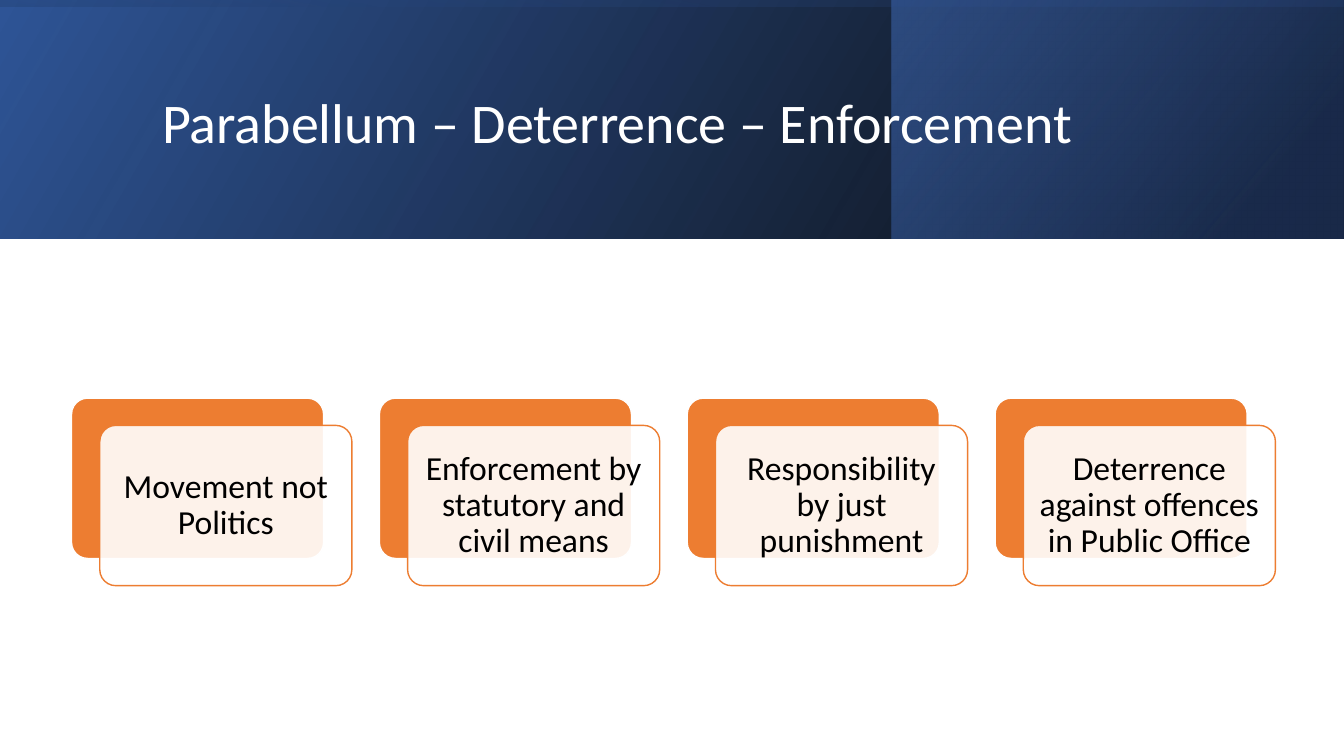
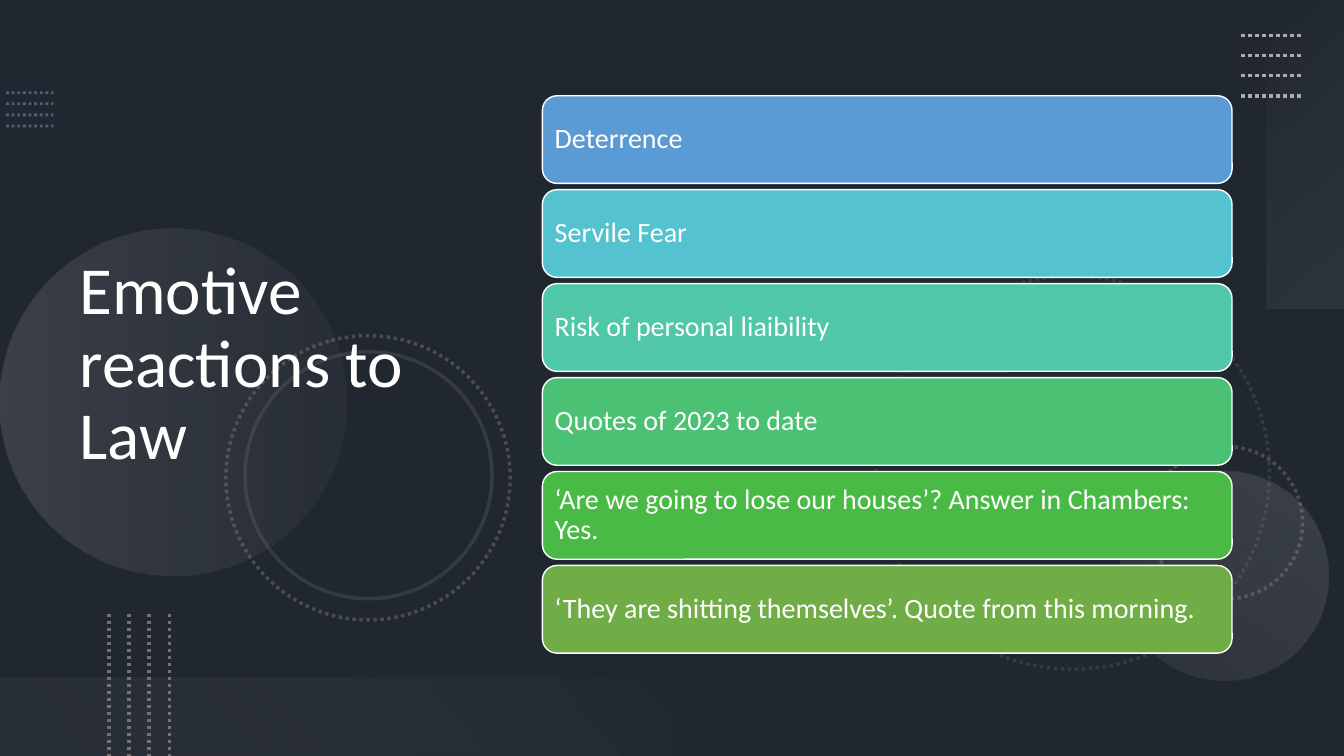
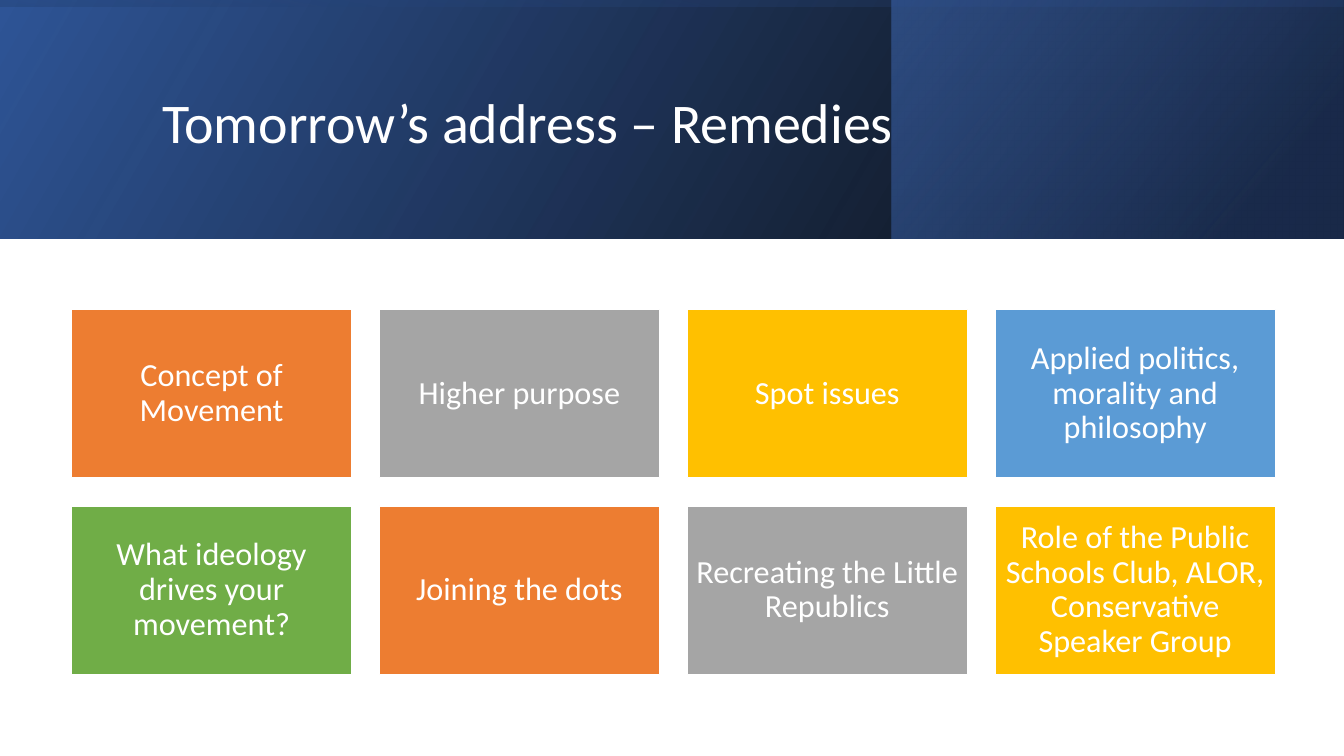
from pptx import Presentation
from pptx.dml.color import RGBColor
from pptx.enum.dml import MSO_LINE
from pptx.enum.shapes import MSO_CONNECTOR, MSO_SHAPE as SHAPE
from pptx.enum.text import MSO_ANCHOR, PP_ALIGN
from pptx.oxml import parse_xml
from pptx.oxml.ns import nsdecls, qn
from pptx.util import Inches, Pt

FONT = "Calibri"
WHITE = RGBColor(0xFF, 0xFF, 0xFF)
BLACK = RGBColor(0, 0, 0)
SLATE = RGBColor(0x44, 0x54, 0x6A)
ORANGE = RGBColor(0xED, 0x7D, 0x31)
GREY = RGBColor(0xA5, 0xA5, 0xA5)
GOLD = RGBColor(0xFF, 0xC0, 0x00)
BLUE = RGBColor(0x5B, 0x9B, 0xD5)
GREEN = RGBColor(0x70, 0xAD, 0x47)
CYAN = RGBColor(0x55, 0xC3, 0xCF)
TEAL = RGBColor(0x50, 0xC8, 0xA7)
MINT = RGBColor(0x4B, 0xC1, 0x74)
LEAF = RGBColor(0x4A, 0xBA, 0x46)
DEEP_BLUE = RGBColor(0x2F, 0x55, 0x97)
NAVY = RGBColor(0x20, 0x38, 0x64)
ROYAL = RGBColor(0x44, 0x72, 0xC4)
STEEL = RGBColor(0x84, 0x97, 0xB0)
STONE = RGBColor(0x76, 0x71, 0x71)
ASH = RGBColor(0xAF, 0xAB, 0xAB)
MIST = RGBColor(0xF5, 0xF5, 0xF5)

AIMS_TITLE = "Parabellum – Deterrence – Enforcement"
AIMS = [
    "Movement not Politics",
    "Enforcement by statutory and civil means",
    "Responsibility by just punishment",
    "Deterrence against offences in Public Office",
]
REACTIONS_TITLE = "Emotive reactions to Law"
REACTIONS = [
    ("Deterrence", BLUE),
    ("Servile Fear", CYAN),
    ("Risk of personal liaibility", TEAL),
    ("Quotes of 2023 to date", MINT),
    ("‘Are we going to lose our houses’? Answer in Chambers: Yes.", LEAF),
    ("‘They are shitting themselves’. Quote from this morning.", GREEN),
]
REMEDIES_TITLE = "Tomorrow’s address – Remedies"
REMEDIES = [
    ("Concept of Movement", ORANGE),
    ("Higher purpose", GREY),
    ("Spot issues", GOLD),
    ("Applied politics, morality and philosophy", BLUE),
    ("What ideology drives your movement?", GREEN),
    ("Joining the dots", ORANGE),
    ("Recreating the Little Republics", GREY),
    ("Role of the Public Schools Club, ALOR, Conservative Speaker Group", GOLD),
]

# Gradient: angle, then stops of (position %, colour, opacity %)
# Band part: box, rotation, gradient
BAND = [
    ((0, 0, 13.33, 2.37), 0, (330, (0, BLACK, 96), (100, DEEP_BLUE, 100))),
    ((8.84, 0, 4.48, 2.37), 0, (320, (19, NAVY, 68), (100, ROYAL, 48))),
    ((5.48, -5.48, 2.37, 13.33), 270, (350, (23, DEEP_BLUE, 16), (99, BLACK, 45))),
]
# Ring: left, top, diameter, dotted, opacity %
RINGS = [
    (8.69, 2.74, 3.9, True, 25),
    (11.41, 4.43, 1.51, True, 50),
    (2.24, 3.33, 2.82, True, 50),
    (2.43, 3.49, 2.45, False, 25),
]
# Glow: shape, box, rotation, gradient
GLOWS = [
    (SHAPE.OVAL, (0, 2.27, 3.44, 3.44), 270, (90, (0, ASH, 20), (100, STONE, 10))),
    (SHAPE.OVAL, (11.1, 4.67, 2.08, 2.08), 210, (90, (0, ASH, 10), (100, ASH, 20))),
    (SHAPE.RECTANGLE, (11.42, 1.14, 3.06, 0.78), 270, (140, (0, MIST, 0), (100, ASH, 10))),
    (SHAPE.RECTANGLE, (0, 6.72, 6.67, 0.78), 180, (140, (10, STONE, 10), (100, MIST, 0))),
]
# Dotted lines: first start, length (dx, dy), step (dx, dy), colour, width, opacity %
DOT_GRIDS = [
    ((0.06, 0.92), (0.47, 0), (0, 0.11), STEEL, 2, 50),
    ((12.31, 0.35), (0.6, 0), (0, 0.2), ASH, 2.5, 100),
    ((1.08, 6.09), (0, 1.41), (0.2, 0), STONE, 2.5, 100),
]
LINES_PER_GRID = 4

COLUMNS = 4
CARD_LEFT, CARD_W = 0.71, 2.78
COLUMN_STEP = (9.87 - CARD_LEFT) / (COLUMNS - 1)


def set_opacity(parent, percent):
    """Make the solid colour below an XML element partly transparent."""
    if percent < 100:
        clr = next(parent.iter(qn("a:srgbClr")))
        clr.append(parse_xml(f'<a:alpha {nsdecls("a")} val="{percent * 1000}"/>'))


def set_gradient(sp, angle, *stops):
    marks = "".join(
        f'<a:gs pos="{pos * 1000}"><a:srgbClr val="{color}">'
        f'<a:alpha val="{alpha * 1000}"/></a:srgbClr></a:gs>'
        for pos, color, alpha in stops)
    sp.fill.background()
    spPr = sp._element.spPr
    spPr.replace(spPr.find(qn("a:noFill")), parse_xml(
        f'<a:gradFill {nsdecls("a")} rotWithShape="1"><a:gsLst>{marks}</a:gsLst>'
        f'<a:lin ang="{angle * 60000}" scaled="0"/></a:gradFill>'))


def add_shape(slide, kind, box, fill=None, line=None, width=1, opacity=100,
              rotation=0, corner=None):
    sp = slide.shapes.add_shape(kind, *map(Inches, box))
    sp.shadow.inherit = False
    sp.rotation = rotation
    if corner is not None:
        sp.adjustments[0] = corner
    if fill is None:
        sp.fill.background()
    else:
        sp.fill.solid()
        sp.fill.fore_color.rgb = fill
        set_opacity(sp._element.spPr, opacity)
    if line is None:
        sp.line.fill.background()
    else:
        sp.line.color.rgb = line
        sp.line.width = Pt(width)
    return sp


def write(sp, text, size, color=WHITE, align=PP_ALIGN.LEFT, inset=0.1):
    tf = sp.text_frame
    tf.word_wrap = True
    tf.vertical_anchor = MSO_ANCHOR.MIDDLE
    tf.margin_left = tf.margin_right = Inches(inset)
    tf.margin_top = tf.margin_bottom = Inches(inset)
    p = tf.paragraphs[0]
    p.alignment = align
    p.line_spacing = 0.9
    r = p.add_run()
    r.text = text
    r.font.name = FONT
    r.font.size = Pt(size)
    r.font.color.rgb = color


def add_title(slide, text, box, size):
    write(slide.shapes.add_textbox(*map(Inches, box)), text, size)


def new_slide(prs, color):
    slide = prs.slides.add_slide(prs.slide_layouts[6])
    slide.background.fill.solid()
    slide.background.fill.fore_color.rgb = color
    return slide


def add_banded_slide(prs, title):
    slide = new_slide(prs, WHITE)
    for box, rotation, gradient in BAND:
        sp = add_shape(slide, SHAPE.RECTANGLE, box, rotation=rotation)
        set_gradient(sp, *gradient)
        sp._element.spPr.find(qn("a:xfrm")).set("flipH", "1")
    add_title(slide, title, (1.51, 0.38, 10.63, 1.72), 40)
    return slide


def add_dot_grid(slide, start, length, step, color, width, opacity):
    for i in range(LINES_PER_GRID):
        x, y = (s + i * d for s, d in zip(start, step))
        line = slide.shapes.add_connector(
            MSO_CONNECTOR.STRAIGHT, Inches(x), Inches(y),
            Inches(x + length[0]), Inches(y + length[1]))
        line.line.color.rgb = color
        line.line.width = Pt(width)
        line.line.dash_style = MSO_LINE.ROUND_DOT
        spPr = line._element.spPr
        set_opacity(spPr, opacity)
        spPr.append(parse_xml(f'<a:effectLst {nsdecls("a")}/>'))


def build_aims(prs):
    slide = add_banded_slide(prs, AIMS_TITLE)
    for i, text in enumerate(AIMS):
        x = CARD_LEFT + i * COLUMN_STEP
        add_shape(slide, SHAPE.ROUNDED_RECTANGLE, (x, 3.95, 2.5, 1.59),
                  ORANGE, WHITE, corner=0.1)
        front = add_shape(slide, SHAPE.ROUNDED_RECTANGLE, (x + 0.28, 4.22, 2.5, 1.59),
                          WHITE, ORANGE, opacity=90, corner=0.1)
        write(front, text, 24, BLACK, PP_ALIGN.CENTER)


def build_reactions(prs):
    slide = new_slide(prs, SLATE)
    add_shape(slide, SHAPE.RECTANGLE, (0, 0, 13.33, 7.5), BLACK, opacity=53)
    for x, y, size, dotted, opacity in RINGS:
        ring = add_shape(slide, SHAPE.OVAL, (x, y, size, size),
                         line=STONE, width=2.5, rotation=75)
        set_opacity(ring._element.spPr, opacity)
        if dotted:
            ring.line.dash_style = MSO_LINE.ROUND_DOT
    for kind, box, rotation, gradient in GLOWS:
        set_gradient(add_shape(slide, kind, box, rotation=rotation), *gradient)
    for grid in DOT_GRIDS:
        add_dot_grid(slide, *grid)
    add_title(slide, REACTIONS_TITLE, (0.69, 0.54, 4.59, 6.17), 48)
    top, last = 0.95, 5.61
    step = (last - top) / (len(REACTIONS) - 1)
    for i, (text, color) in enumerate(REACTIONS):
        bar = add_shape(slide, SHAPE.ROUNDED_RECTANGLE,
                        (5.38, top + i * step, 6.84, 0.87), color, WHITE)
        write(bar, text, 20, inset=0.08)


def build_remedies(prs):
    slide = add_banded_slide(prs, REMEDIES_TITLE)
    for i, (text, color) in enumerate(REMEDIES):
        row, col = divmod(i, COLUMNS)
        box = (CARD_LEFT + col * COLUMN_STEP, 3.07 + row * 1.95, CARD_W, 1.67)
        card = add_shape(slide, SHAPE.RECTANGLE, box, color, WHITE)
        write(card, text, 23, align=PP_ALIGN.CENTER, inset=0.09)


def main():
    prs = Presentation()
    prs.slide_width, prs.slide_height = Inches(13.33), Inches(7.5)
    build_aims(prs)
    build_reactions(prs)
    build_remedies(prs)
    prs.save("out.pptx")


if __name__ == "__main__":
    main()
